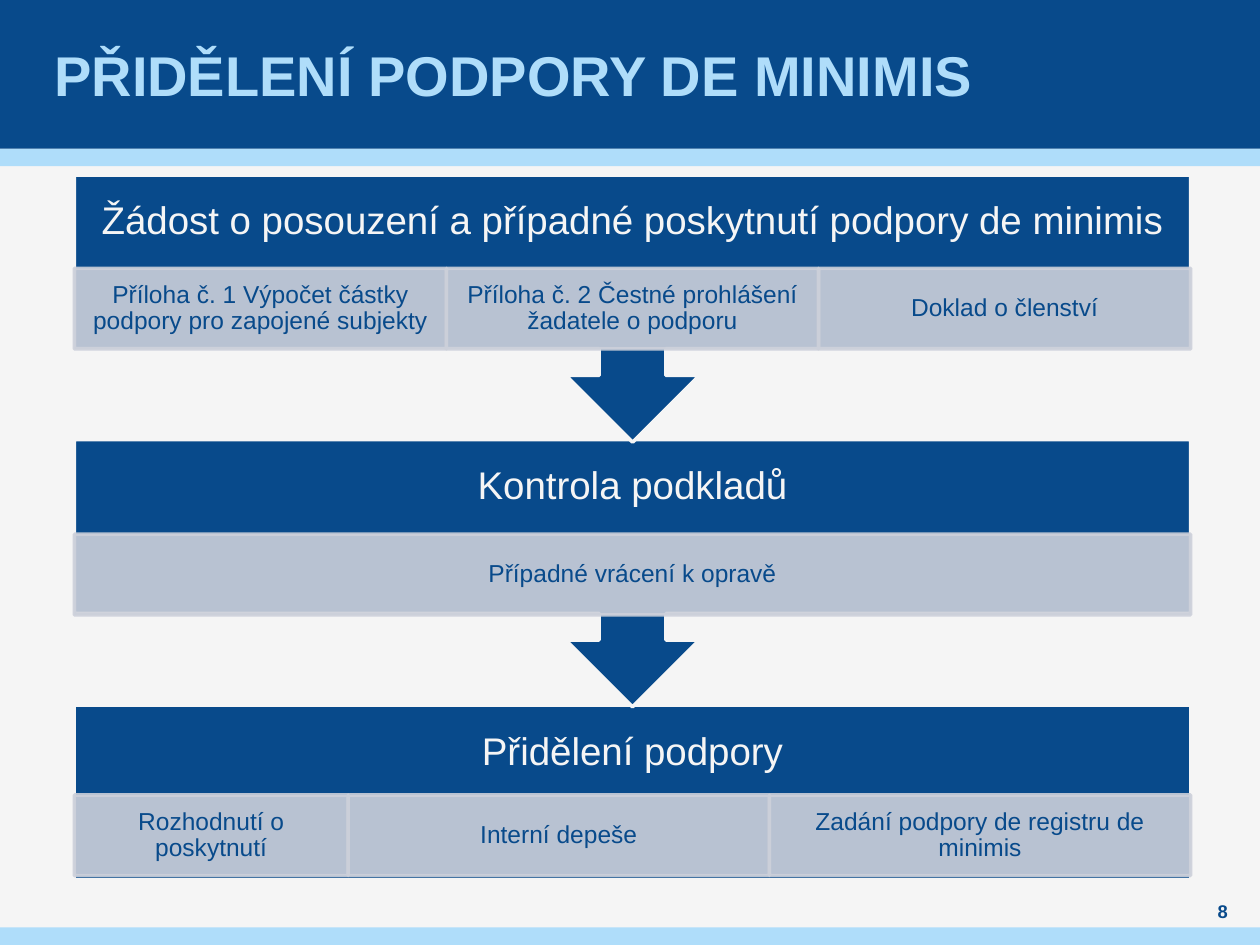
"""Build the slide on granting de minimis support."""
from dataclasses import dataclass

import pptx
import pptx.dml.color
import pptx.enum.shapes
import pptx.enum.text
import pptx.oxml
import pptx.oxml.ns
import pptx.util

SHAPES = pptx.enum.shapes.MSO_SHAPE
ALIGN = pptx.enum.text.PP_ALIGN


@dataclass(frozen=True)
class Theme:
    font: str = "Arial"
    paper: str = "F5F5F5"
    navy: str = "084A8B"
    sky: str = "AFDDFA"
    tile: str = "CCD0DA"
    tile_opacity: int = 90
    title_size: float = 32
    heading_size: float = 22
    tile_size: float = 14
    number_size: float = 10.5
    outline: float = 2


class SlideBuilder:
    columns, rows = 100, 75

    def __init__(self, presentation, theme):
        self.theme = theme
        self.column = presentation.slide_width / self.columns
        self.row = presentation.slide_height / self.rows
        self.slide = presentation.slides.add_slide(presentation.slide_layouts[6])
        self.paint(self.slide.background.fill, theme.paper)

    def place(self, left, top, width, height):
        return [round(length) for length in (left * self.column, top * self.row,
                                             width * self.column, height * self.row)]

    def paint(self, fill, color, opacity=100):
        fill.solid()
        fill.fore_color.rgb = pptx.dml.color.RGBColor.from_string(color)
        if opacity < 100:
            choice = fill._xPr.find(pptx.oxml.ns.qn("a:solidFill"))[0]
            alpha = pptx.oxml.parse_xml(f'<a:alpha {pptx.oxml.ns.nsdecls("a")} val="{opacity * 1000}"/>')
            choice.append(alpha)

    def block(self, box, fill, line=None, kind=SHAPES.RECTANGLE, opacity=100):
        shape = self.slide.shapes.add_shape(kind, *self.place(*box))
        shape.shadow.inherit = False
        self.paint(shape.fill, fill, opacity)
        if line:
            shape.line.width = pptx.util.Pt(self.theme.outline)
            self.paint(shape.line.fill, line, opacity)
        else:
            shape.line.fill.background()
        return shape

    def add_text(self, shape, text, size, color, insets, bold=False, align=ALIGN.CENTER, spacing=1.0):
        frame = shape.text_frame
        frame.word_wrap = True
        frame.vertical_anchor = pptx.enum.text.MSO_ANCHOR.MIDDLE
        horizontal, vertical = (pptx.util.Inches(inset) for inset in insets)
        frame.margin_left = frame.margin_right = horizontal
        frame.margin_top = frame.margin_bottom = vertical
        paragraph = frame.paragraphs[0]
        paragraph.alignment = align
        paragraph.line_spacing = spacing
        run = paragraph.add_run()
        run.text = text
        run.font.name = self.theme.font
        run.font.size = pptx.util.Pt(size)
        run.font.bold = bold
        run.font.color.rgb = pptx.dml.color.RGBColor.from_string(color)

    def label(self, box, text, size, color, insets=(0, 0), **style):
        shape = self.slide.shapes.add_textbox(*self.place(*box))
        self.add_text(shape, text, size, color, insets, **style)

    def tile(self, box, text):
        theme = self.theme
        shape = self.block(box, theme.tile, theme.tile, opacity=theme.tile_opacity)
        self.add_text(shape, text, theme.tile_size, theme.navy, (0.11, 0.02), spacing=0.9)

    def stage(self, top, height, tile_top, heading, tiles, leads_on):
        theme, left, width = self.theme, 5.9, 88.6
        kind = SHAPES.UP_ARROW_CALLOUT if leads_on else SHAPES.RECTANGLE
        shape = self.block((left, top, width, height), theme.navy, theme.paper, kind)
        shape.rotation = 180 if leads_on else 0
        self.label((left, top, width, 7.5), heading, theme.heading_size, theme.paper,
                   (0.17, 0.17), spacing=0.9)
        total = sum(weight for _, weight in tiles)
        for text, weight in tiles:
            share = width * weight / total
            self.tile((left, tile_top, share, 6.4), text)
            left += share


def main():
    presentation = pptx.Presentation()
    presentation.slide_width = pptx.util.Inches(10)
    presentation.slide_height = pptx.util.Inches(7.5)
    theme = Theme()
    builder = SlideBuilder(presentation, theme)

    for top, height, color in ((11.8, 1.4, theme.sky), (0, 11.8, theme.navy), (73.6, 1.4, theme.sky)):
        builder.block((0, top, builder.columns, height), color)
    builder.label((3.9, 0, 92.1, 11.8), "PŘIDĚLENÍ PODPORY DE MINIMIS", theme.title_size,
                  theme.sky, (0.04, 0), bold=True, align=ALIGN.LEFT)

    stages = (
        (56, 13.8, 63.1, "Přidělení podpory",
         (("Rozhodnutí o poskytnutí", 13), ("Interní depeše", 20),
          ("Zadání podpory de registru de minimis", 20)), False),
        (34.9, 21.2, 42.4, "Kontrola podkladů", (("Případné vrácení k opravě", 1),), True),
        (13.9, 21.2, 21.3, "Žádost o posouzení a případné poskytnutí podpory de minimis",
         (("Příloha č. 1 Výpočet částky podpory pro zapojené subjekty", 1),
          ("Příloha č. 2 Čestné prohlášení žadatele o podporu", 1),
          ("Doklad o členství", 1)), True),
    )
    for stage in stages:
        builder.stage(*stage)

    builder.label((94.5, 71.3, 5.1, 2), "8", theme.number_size, theme.navy, bold=True)
    presentation.save("out.pptx")


if __name__ == "__main__":
    main()
